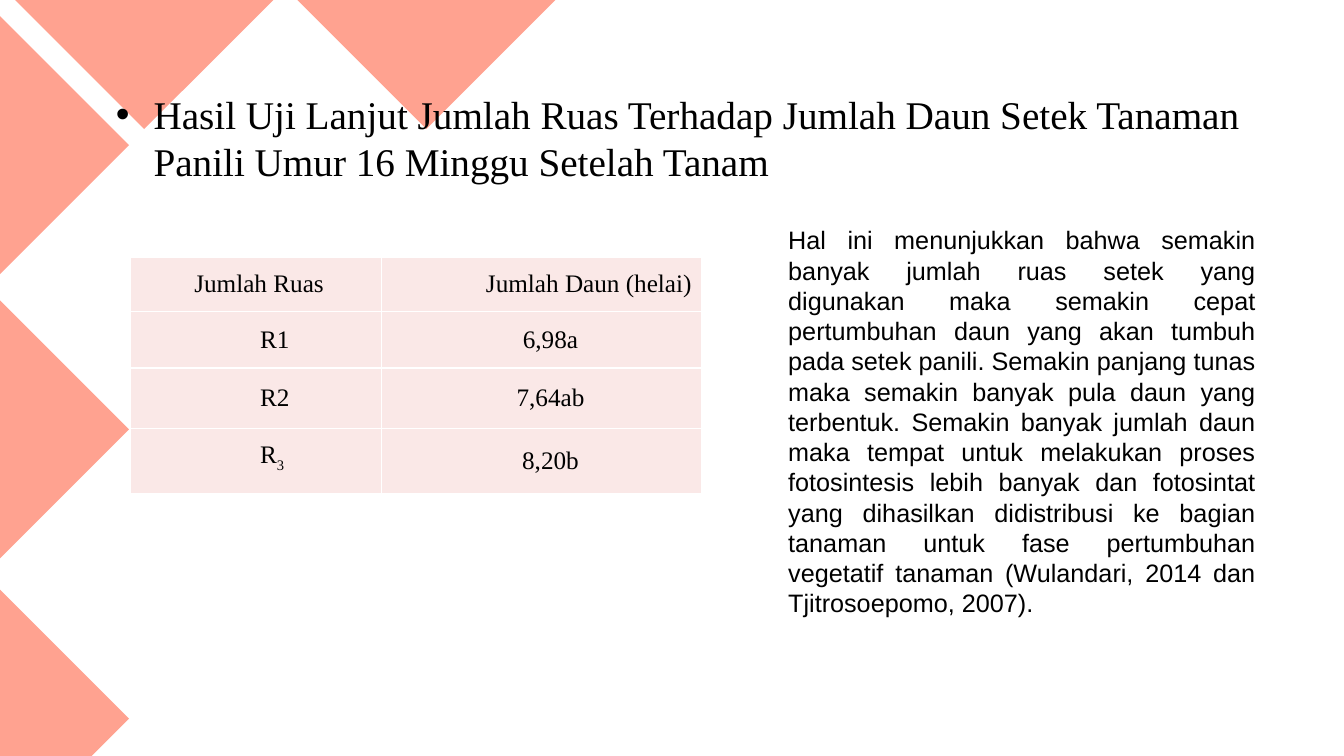
"""Build the slide on how the number of nodes affects the leaf count of vanilla cuttings."""
from dataclasses import dataclass

from lxml.etree import SubElement
from pptx import Presentation
from pptx.dml.color import RGBColor
from pptx.enum.text import MSO_ANCHOR as Anchor, PP_ALIGN as Align
from pptx.oxml.ns import qn
from pptx.util import Inches, Pt

TITLE = "Hasil Uji Lanjut Jumlah Ruas Terhadap Jumlah Daun Setek Tanaman Panili Umur 16 Minggu Setelah Tanam"
DISCUSSION = (
    "Hal ini menunjukkan bahwa semakin banyak jumlah ruas setek yang digunakan maka semakin cepat "
    "pertumbuhan daun yang akan tumbuh pada setek panili. Semakin panjang tunas maka semakin banyak "
    "pula daun yang terbentuk. Semakin banyak jumlah daun maka tempat untuk melakukan proses "
    "fotosintesis lebih banyak dan fotosintat yang dihasilkan didistribusi ke bagian tanaman untuk "
    "fase pertumbuhan vegetatif tanaman (Wulandari, 2014 dan Tjitrosoepomo, 2007)."
)
ROWS = [
    (["Jumlah Ruas"], ["Jumlah Daun (helai)"]),
    (["R1"], ["6,98a"]),
    (["R2"], ["7,64ab"]),
    (["R", "3"], ["8,20b"]),
]

SLIDE_WIDTH, SLIDE_HEIGHT = Inches(13.33), Inches(7.5)
TITLE_BOX = (14, 5.33, 153.87, 25.6)
DISCUSSION_BOX = (102.93, 29.07, 64.4, 53.87)
TABLE_ORIGIN = (17.2, 34)
COLUMN_WIDTHS = (33.2, 42.4)
ROW_HEIGHTS = (7.2, 7.47, 8, 8.67)
HEADER_LAYOUT = ((Align.CENTER, 0.93), (Align.LEFT, 13.87))
BODY_LAYOUT = ((Align.LEFT, 17.2), (Align.CENTER, 2.4))
BULLET_INDENT = 5
HALF_DIAGONAL = 17.07
DIAMOND_GROUPS = [
    [("left", 19.2), ("top", 19.07)],
    [("left", 56.8)],
    [("top", 56.4)],
    [("left", 95.07)],
]


@dataclass(frozen=True)
class Theme:
    coral: RGBColor = RGBColor(0xFF, 0xA2, 0x90)
    blush: RGBColor = RGBColor(0xFA, 0xE8, 0xE7)
    ink: RGBColor = RGBColor(0, 0, 0)
    border: str = "FFFFFF"
    serif: str = "Times New Roman"
    sans: str = "Arial"
    title_size: Pt = Pt(28)
    body_size: Pt = Pt(18)
    subscript_line: Pt = Pt(17.2)


THEME = Theme()


def share(percent):
    return round(SLIDE_HEIGHT * percent / 100)


def add_run(paragraph, text, font_name, size):
    run = paragraph.add_run()
    run.text = text
    run.font.name, run.font.size = font_name, size
    run.font.bold = False
    run.font.color.rgb = THEME.ink
    return run


def half_diamond(edge, center):
    if edge == "top":
        return [(center - HALF_DIAGONAL, 0), (center + HALF_DIAGONAL, 0), (center, HALF_DIAGONAL)]
    points = [(0, center - HALF_DIAGONAL), (HALF_DIAGONAL, center)]
    overflow = center + HALF_DIAGONAL - 100
    if overflow > 0:
        return points + [(overflow, 100), (0, 100)]
    return points + [(0, center + HALF_DIAGONAL)]


def add_diamonds(slide, group):
    builder = None
    for edge, center in group:
        start, *others = [(share(x), share(y)) for x, y in half_diamond(edge, center)]
        if builder is None:
            builder = slide.shapes.build_freeform(*start, scale=1.0)
        else:
            builder.move_to(*start)
        builder.add_line_segments(others, close=True)
    shape = builder.convert_to_shape()
    shape.shadow.inherit = False
    shape.fill.solid()
    shape.fill.fore_color.rgb = THEME.coral
    shape.line.fill.background()


def add_text(slide, box, text, font_name, size, anchor):
    frame = slide.shapes.add_textbox(*map(share, box)).text_frame
    frame.word_wrap = True
    frame.vertical_anchor = anchor
    paragraph = frame.paragraphs[0]
    add_run(paragraph, text, font_name, size)
    return paragraph


def add_bullet(paragraph):
    properties = paragraph._p.get_or_add_pPr()
    properties.set("marL", str(share(BULLET_INDENT)))
    properties.set("indent", str(-share(BULLET_INDENT)))
    SubElement(properties, qn("a:buFont"), typeface=THEME.sans)
    SubElement(properties, qn("a:buChar"), char="•")


def style_cell(cell):
    cell.margin_left = cell.margin_right = cell.margin_top = cell.margin_bottom = 0
    cell.vertical_anchor = Anchor.MIDDLE
    properties = cell._tc.get_or_add_tcPr()
    for side in ("a:lnL", "a:lnR", "a:lnT", "a:lnB"):
        line = SubElement(properties, qn(side), w=str(Pt(1)))
        SubElement(SubElement(line, qn("a:solidFill")), qn("a:srgbClr"), val=THEME.border)
    cell.fill.solid()
    cell.fill.fore_color.rgb = THEME.blush


def fill_cell(cell, texts, alignment, indent):
    style_cell(cell)
    paragraph = cell.text_frame.paragraphs[0]
    paragraph.alignment = alignment
    paragraph._p.get_or_add_pPr().set("marL", str(share(indent)))
    add_run(paragraph, texts[0], THEME.serif, THEME.body_size)
    for subscript in texts[1:]:
        paragraph.line_spacing = THEME.subscript_line
        run = add_run(paragraph, subscript, THEME.serif, THEME.body_size)
        run._r.get_or_add_rPr().set("baseline", "-25000")


def add_leaf_table(slide):
    size = (sum(COLUMN_WIDTHS), sum(ROW_HEIGHTS))
    frame = slide.shapes.add_table(len(ROWS), len(COLUMN_WIDTHS), *map(share, TABLE_ORIGIN + size))
    table = frame.table
    table.first_row = table.horz_banding = False
    for column, width in zip(table.columns, COLUMN_WIDTHS):
        column.width = share(width)
    for row_index, (row, height) in enumerate(zip(table.rows, ROW_HEIGHTS)):
        row.height = share(height)
        layout = BODY_LAYOUT if row_index else HEADER_LAYOUT
        for cell, texts, (alignment, indent) in zip(row.cells, ROWS[row_index], layout):
            fill_cell(cell, texts, alignment, indent)


def main():
    presentation = Presentation()
    presentation.slide_width, presentation.slide_height = SLIDE_WIDTH, SLIDE_HEIGHT
    slide = presentation.slides.add_slide(presentation.slide_layouts[6])
    for group in DIAMOND_GROUPS:
        add_diamonds(slide, group)
    discussion = add_text(slide, DISCUSSION_BOX, DISCUSSION, THEME.sans, THEME.body_size, Anchor.TOP)
    discussion.alignment = Align.JUSTIFY
    title = add_text(slide, TITLE_BOX, TITLE, THEME.serif, THEME.title_size, Anchor.MIDDLE)
    add_bullet(title)
    add_leaf_table(slide)
    presentation.save("out.pptx")


if __name__ == "__main__":
    main()
